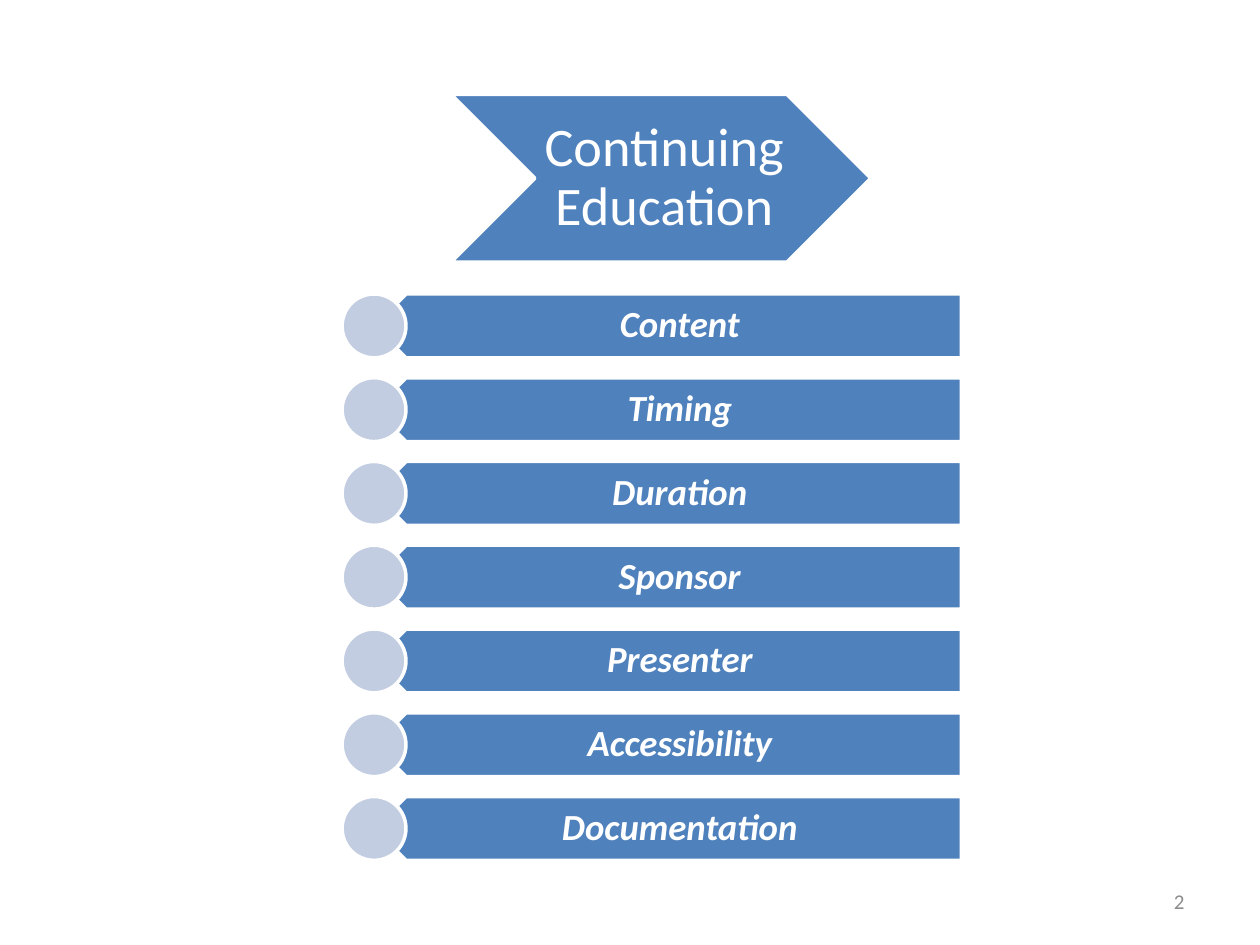
from pptx import Presentation
from pptx.dml.color import RGBColor
from pptx.enum.shapes import MSO_SHAPE
from pptx.enum.text import MSO_ANCHOR, PP_ALIGN
from pptx.util import Pt

BLUE, PALE, WHITE, GRAY = "4F81BD", "C2CDE1", "FFFFFF", "8C8C8C"


def draw(kind, box, fill):
    shape = slide.shapes.add_shape(kind, *map(Pt, box))
    shape.shadow.inherit = False
    shape.fill.solid()
    shape.fill.fore_color.rgb = RGBColor.from_string(fill)
    shape.line.color.rgb = RGBColor.from_string(WHITE)
    shape.line.width = Pt(2)
    return shape


def write(text, box, size, color, align, insets, spacing=0.9, strong=None):
    """Add a text box; insets are left, top, right, bottom; strong is bold italic."""
    frame = slide.shapes.add_textbox(*map(Pt, box)).text_frame
    frame.word_wrap = True
    frame.vertical_anchor = MSO_ANCHOR.MIDDLE
    (frame.margin_left, frame.margin_top,
     frame.margin_right, frame.margin_bottom) = map(Pt, insets)
    para = frame.paragraphs[0]
    para.text = text
    para.alignment = align
    para.line_spacing = spacing
    font = para.font
    font.name, font.size = "Calibri", Pt(size)
    font.bold = font.italic = strong
    font.color.rgb = RGBColor.from_string(color)


deck = Presentation()
deck.slide_width, deck.slide_height = Pt(720), Pt(540)
slide = deck.slides.add_slide(deck.slide_layouts[6])

# Heading arrow
draw(MSO_SHAPE.CHEVRON, (257.8, 54, 239.8, 95.8), BLUE)
write("Continuing Education", (306, 54, 144, 95.8), 31, WHITE,
      PP_ALIGN.CENTER, (3, 1.5, 0, 1.5))

# Topic bars, each with a dot over its pointed left end
topics = ["Content", "Timing", "Duration", "Sponsor", "Presenter",
          "Accessibility", "Documentation"]
first, pitch, high = 168, 47.86, 36.5
for row, topic in enumerate(topics):
    top = first + row * pitch
    bar = draw(MSO_SHAPE.PENTAGON, (213.8, top, 335.5, high), BLUE)
    bar.rotation = 180
    write(topic, (223, top, 326.3, high), 21, WHITE, PP_ALIGN.CENTER,
          (16.3, 6.3, 11.7, 6.3), strong=True)
    draw(MSO_SHAPE.OVAL, (195.5, top, high, high), PALE)

# Page number
write("2", (516, 500.5, 168, 28.75), 12, GRAY, PP_ALIGN.RIGHT,
      (7.2, 3.6, 7.2, 3.6), spacing=1.0)

deck.save("out.pptx")
